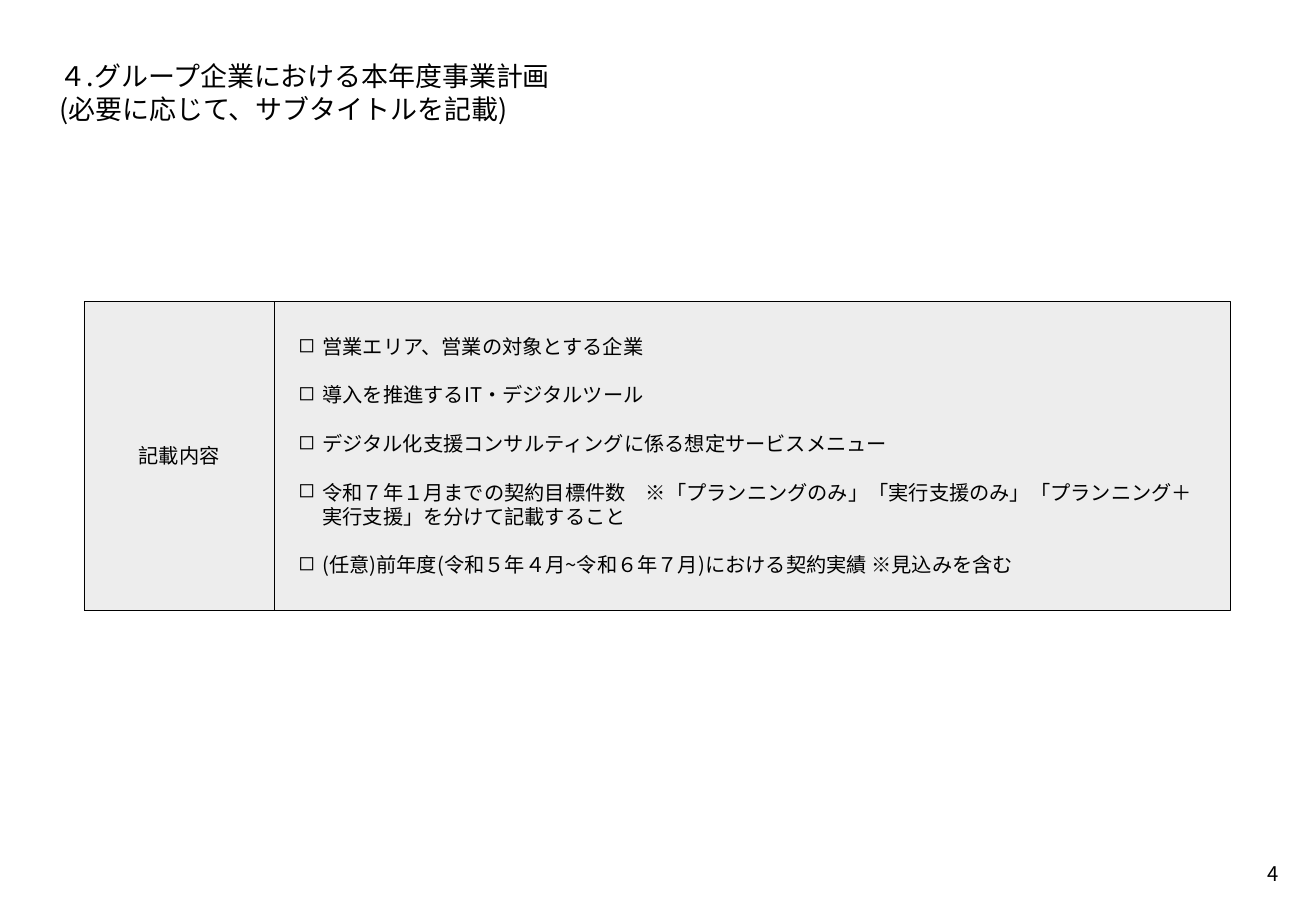
from lxml import etree
from pptx import Presentation
from pptx.dml.color import RGBColor
from pptx.enum.dml import MSO_LINE
from pptx.enum.shapes import MSO_SHAPE
from pptx.enum.text import MSO_ANCHOR, MSO_AUTO_SIZE, PP_ALIGN
from pptx.oxml.ns import qn
from pptx.util import Pt

# Content
TITLE = "４.グループ企業における本年度事業計画\v(必要に応じて、サブタイトルを記載)"
LABEL = "記載内容"
ITEMS = [
    "営業エリア、営業の対象とする企業",
    "導入を推進するIT・デジタルツール",
    "デジタル化支援コンサルティングに係る想定サービスメニュー",
    "令和７年１月までの契約目標件数　※「プランニングのみ」「実行支援のみ」"
    "「プランニング＋実行支援」を分けて記載すること",
    "(任意)前年度(令和５年４月~令和６年７月)における契約実績 ※見込みを含む",
]
PAGE_NUMBER = "4"

# Style and layout, in points
FONT = "Noto Sans CJK JP"
COLORS = {"text": "000000", "line": "000000", "panel": "EDEDED"}
BODY_SIZE, TITLE_SIZE = 12, 16
PAGE_W, PAGE_H = 780, 540
PANEL_X, PANEL_Y, PANEL_H = 49.7, 178.6, 182.9
LABEL_W, ITEMS_W = 113, 566.6
INDENT = 14.2
ITEM_GAP = 14.4
TOP, MIDDLE = MSO_ANCHOR.TOP, MSO_ANCHOR.MIDDLE
LEFT, CENTER, RIGHT = PP_ALIGN.LEFT, PP_ALIGN.CENTER, PP_ALIGN.RIGHT


def write(sp, lines, size, align, anchor, inset, wrap=True):
    tf = sp.text_frame
    tf.auto_size = MSO_AUTO_SIZE.NONE
    tf.word_wrap = wrap
    tf.vertical_anchor = anchor
    tf.margin_left = tf.margin_right = Pt(inset)
    tf.margin_top = tf.margin_bottom = Pt(inset)
    tf.text = "\n".join(lines)
    for p in tf.paragraphs:
        p.alignment = align
        p.font.size = Pt(size)
        p.font.name = FONT
        p.font.color.rgb = RGBColor.from_string(COLORS["text"])
        for r in p.runs:
            r.font.name = FONT
            ea = etree.SubElement(r.font._element, qn("a:ea"))
            ea.set("typeface", FONT)
    return tf


def add_panel(s, x, w):
    sp = s.shapes.add_shape(MSO_SHAPE.RECTANGLE, Pt(x), Pt(PANEL_Y), Pt(w), Pt(PANEL_H))
    sp.shadow.inherit = False
    sp.fill.solid()
    sp.fill.fore_color.rgb = RGBColor.from_string(COLORS["panel"])
    sp.line.color.rgb = RGBColor.from_string(COLORS["line"])
    sp.line.width = Pt(0.25)
    sp.line.dash_style = MSO_LINE.ROUND_DOT
    return sp


def add_bullet(p):
    pPr = p._p.get_or_add_pPr()
    pPr.set("marL", str(Pt(INDENT)))
    pPr.set("indent", str(-Pt(INDENT)))
    bullet = etree.Element(qn("a:buChar"), char="◻")
    pPr.find(qn("a:defRPr")).addprevious(bullet)


def main():
    prs = Presentation()
    prs.slide_width, prs.slide_height = Pt(PAGE_W), Pt(PAGE_H)
    s = prs.slides.add_slide(prs.slide_layouts[5])

    # Title
    title = s.shapes.title
    title.left, title.top, title.width, title.height = Pt(21.3), Pt(21.3), Pt(737), Pt(57)
    write(title, [TITLE], TITLE_SIZE, LEFT, TOP, 14.2)

    # Page number
    number = s.shapes.add_textbox(Pt(737.3), Pt(503.3), Pt(28), Pt(28))
    write(number, [PAGE_NUMBER], BODY_SIZE, RIGHT, TOP, 7.2, wrap=False)

    # Bulleted items and their label
    items = add_panel(s, PANEL_X + LABEL_W, ITEMS_W)
    tf = write(items, ITEMS, BODY_SIZE, LEFT, MIDDLE, 14.2)
    for i, p in enumerate(tf.paragraphs):
        p.space_before = Pt(ITEM_GAP if i else 0)
        add_bullet(p)
    label = add_panel(s, PANEL_X, LABEL_W)
    write(label, [LABEL], BODY_SIZE, CENTER, MIDDLE, 7.2)

    prs.save("out.pptx")


if __name__ == "__main__":
    main()
